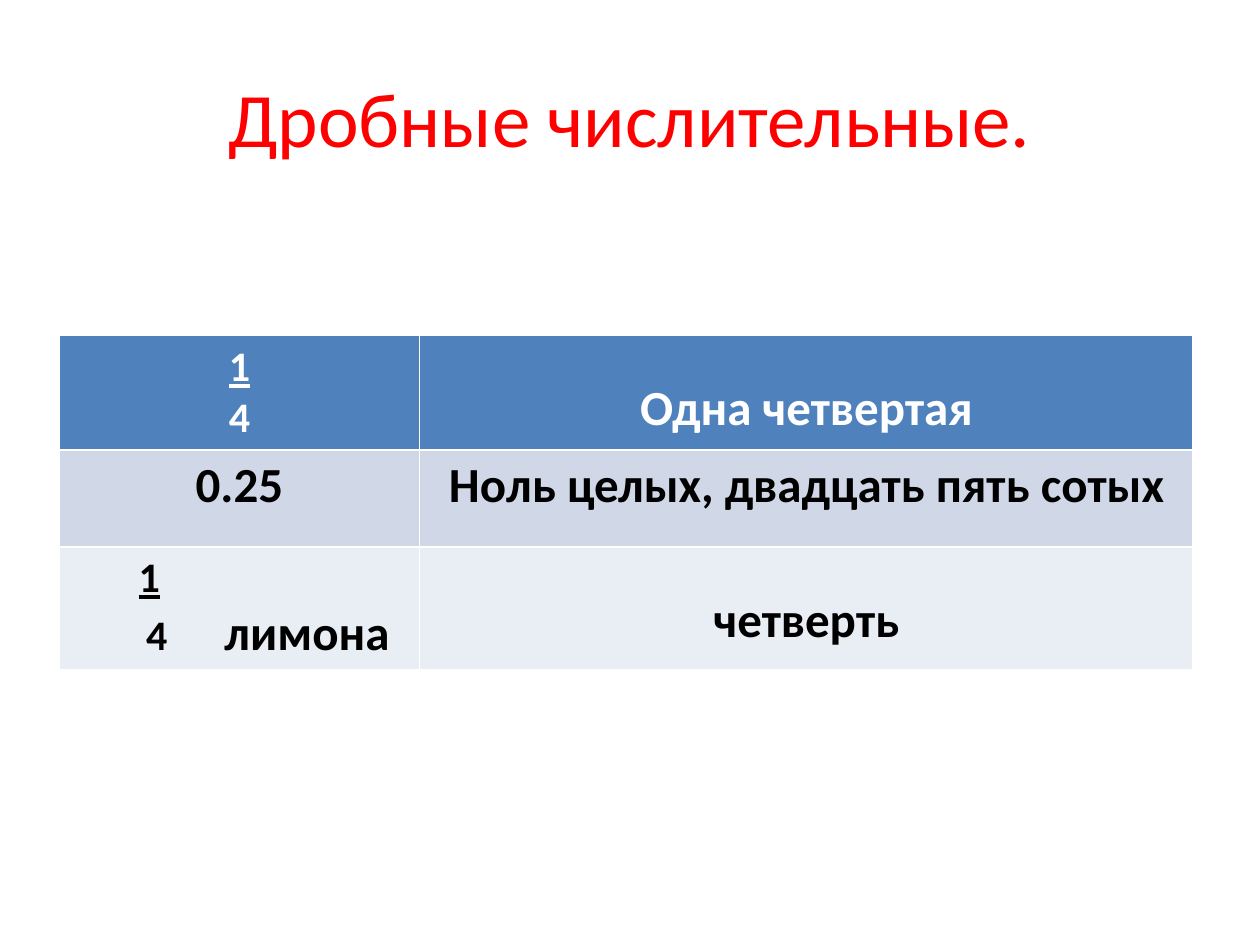
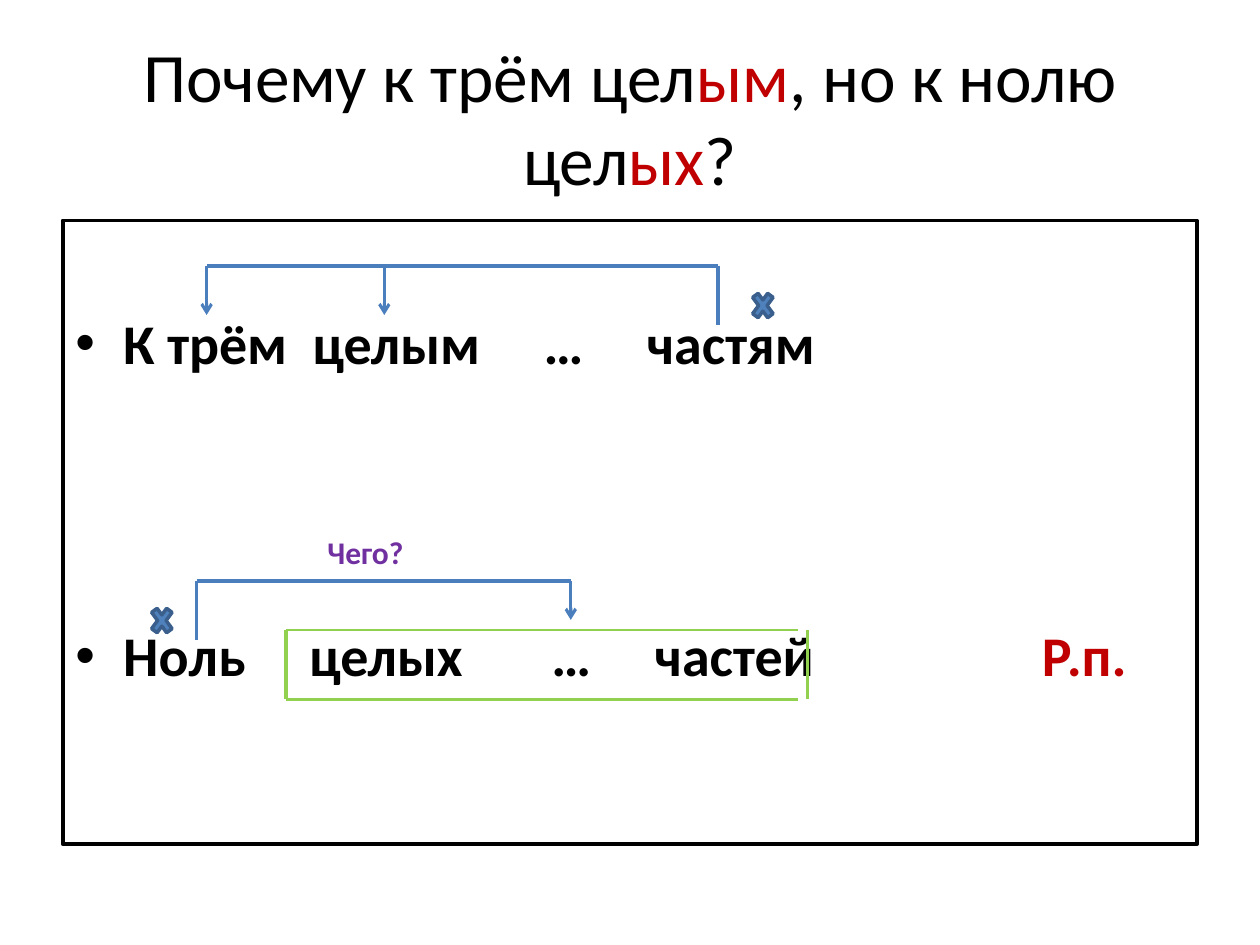
import pptx
import pptx.util
import pptx.dml.color
import pptx.enum.shapes
import pptx.enum.text
import pptx.oxml
import pptx.oxml.ns

Inches = pptx.util.Inches
Pt = pptx.util.Pt
RGBColor = pptx.dml.color.RGBColor
PP_ALIGN = pptx.enum.text.PP_ALIGN
MSO_ANCHOR = pptx.enum.text.MSO_ANCHOR
MSO_SHAPE = pptx.enum.shapes.MSO_SHAPE

FONT = "Calibri"
BLACK = RGBColor(0x00, 0x00, 0x00)
WHITE = RGBColor(0xFF, 0xFF, 0xFF)
RED = RGBColor(0xFF, 0x00, 0x00)
DARK_RED = RGBColor(0xC0, 0x00, 0x00)
PURPLE = RGBColor(0x70, 0x30, 0xA0)
BLUE = RGBColor(0x4F, 0x81, 0xBD)
ARROW_BLUE = RGBColor(0x4B, 0x7E, 0xBC)
CROSS_EDGE = RGBColor(0x3A, 0x5F, 0x8C)
GREEN = RGBColor(0x92, 0xD0, 0x50)
ROW_DARK = RGBColor(0xD0, 0xD8, 0xE8)
ROW_LIGHT = RGBColor(0xE9, 0xED, 0xF4)

SPACE_WIDTH = 0.226


def add_run(p, text, size, color=BLACK, bold=False, underline=False):
    r = p.add_run()
    r.text = text
    r.font.name = FONT
    r.font.size = Pt(size)
    r.font.color.rgb = color
    r.font.bold = bold
    r.font.underline = underline
    return r


def add_gap(p, spaces, size):
    r = add_run(p, " ", size, bold=True)
    extra = (spaces - 1) * SPACE_WIDTH * size
    r.font._element.set("spc", str(round(extra * 100)))


def set_indent(p, left, first=0):
    pPr = p._p.get_or_add_pPr()
    pPr.set("marL", str(Inches(left)))
    pPr.set("indent", str(Inches(first)))
    return pPr


def add_textbox(slide, left, top, width, height):
    sp = slide.shapes.add_textbox(Inches(left), Inches(top), Inches(width), Inches(height))
    sp.text_frame.word_wrap = True
    return sp.text_frame


def add_title(slide, parts, size):
    tf = add_textbox(slide, 0.5, 0.3, 9, 1.25)
    tf.vertical_anchor = MSO_ANCHOR.MIDDLE
    p = tf.paragraphs[0]
    p.alignment = PP_ALIGN.CENTER
    for text, color in parts:
        add_run(p, text, size, color)


def add_bullet(p, words, size, space_before=0):
    pPr = set_indent(p, 0.38, -0.38)
    p.alignment = PP_ALIGN.LEFT
    p.space_before = Pt(space_before)
    ns = pptx.oxml.ns.nsdecls("a")
    pPr.append(pptx.oxml.parse_xml(f'<a:buFont {ns} typeface="Arial"/>'))
    pPr.append(pptx.oxml.parse_xml(f'<a:buChar {ns} char="•"/>'))
    for spaces, text, color in words:
        if spaces:
            add_gap(p, spaces, size)
        add_run(p, text, size, color, bold=True)


def add_line(slide, start, end, color, width, arrow=False):
    ends = [Inches(v) for v in (*start, *end)]
    cxn = slide.shapes.add_connector(pptx.enum.shapes.MSO_CONNECTOR.STRAIGHT, *ends)
    cxn.line.color.rgb = color
    cxn.line.width = Pt(width)
    ns = pptx.oxml.ns.nsdecls("a")
    if arrow:
        cxn.line._get_or_add_ln().append(pptx.oxml.parse_xml(f'<a:tailEnd {ns} type="arrow"/>'))
    cxn._element.spPr.append(pptx.oxml.parse_xml(f"<a:effectLst {ns}/>"))


def add_cross(slide, left, top):
    sp = slide.shapes.add_shape(MSO_SHAPE.MATH_MULTIPLY, Inches(left), Inches(top), Inches(0.23), Inches(0.31))
    sp.shadow.inherit = False
    sp.fill.solid()
    sp.fill.fore_color.rgb = BLUE
    sp.line.color.rgb = CROSS_EDGE
    sp.line.width = Pt(2)


def fill_cell(cell, text, size, color, top=0.05):
    cell.margin_top = Inches(top)
    tf = cell.text_frame
    tf.text = text
    for p in tf.paragraphs:
        p.alignment = PP_ALIGN.CENTER
        for r in p.runs:
            r.font.name = FONT
            r.font.size = Pt(size)
            r.font.bold = True
            r.font.color.rgb = color
    return tf


def add_fraction_table(slide):
    heights = [0.91, 0.77, 0.98]
    frame = slide.shapes.add_table(3, 2, Inches(0.47), Inches(2.66), Inches(9), Inches(sum(heights)))
    table = frame.table
    for column, width in zip(table.columns, [2.86, 6.14]):
        column.width = Inches(width)
    for row, height, color in zip(table.rows, heights, [BLUE, ROW_DARK, ROW_LIGHT]):
        row.height = Inches(height)
        for cell in row.cells:
            cell.fill.solid()
            cell.fill.fore_color.rgb = color

    tf = fill_cell(table.cell(0, 0), "1\n4", 24, WHITE)
    tf.paragraphs[0].runs[0].font.underline = True
    fill_cell(table.cell(0, 1), "Одна четвертая", 28, WHITE, top=0.35)
    fill_cell(table.cell(1, 0), "0.25", 28, BLACK)
    fill_cell(table.cell(1, 1), "Ноль целых, двадцать пять сотых", 28, BLACK)
    fill_cell(table.cell(2, 1), "четверть", 28, BLACK, top=0.35)

    tf = table.cell(2, 0).text_frame
    numerator = tf.paragraphs[0]
    set_indent(numerator, 0.53)
    add_run(numerator, "1", 24, bold=True, underline=True)
    denominator = tf.add_paragraph()
    set_indent(denominator, 0.59)
    add_run(denominator, "4", 24, bold=True)
    add_gap(denominator, 6, 24)
    add_run(denominator, "лимона", 28, bold=True)


def add_phrases(slide):
    sp = slide.shapes.add_shape(MSO_SHAPE.RECTANGLE, Inches(0.5), Inches(1.75), Inches(9), Inches(4.95))
    sp.shadow.inherit = False
    sp.fill.background()
    sp.line.color.rgb = BLACK
    sp.line.width = Pt(2.25)
    tf = sp.text_frame
    tf.word_wrap = True
    tf.vertical_anchor = MSO_ANCHOR.TOP
    tf.margin_top = Inches(0.7)
    add_bullet(tf.paragraphs[0], [
        (0, "К трём", BLACK), (2, "целым", BLACK), (5, "…", BLACK), (5, "частям", BLACK),
    ], 32)
    add_bullet(tf.add_paragraph(), [
        (0, "Ноль", BLACK), (5, "целых", BLACK), (7, "…", BLACK), (5, "частей", BLACK),
        (18, "Р.п.", DARK_RED),
    ], 32, space_before=140)


def add_links(slide, y, source, targets, drop):
    xs = [source, *targets]
    add_line(slide, (min(xs), y), (max(xs), y), ARROW_BLUE, 2)
    add_line(slide, (source, y), (source, y + 0.47), ARROW_BLUE, 2)
    for x in targets:
        add_line(slide, (x, y), (x, y + drop), ARROW_BLUE, 1.75, arrow=True)


def add_phrase_frame(slide):
    left, right, top, bottom = 2.27, 6.41, 5, 5.55
    for y in (top, bottom):
        add_line(slide, (left, y), (right - 0.08, y), GREEN, 1.5)
    for x in (left, right):
        add_line(slide, (x, top), (x, bottom), GREEN, 1.75)


def main():
    prs = pptx.Presentation()
    prs.slide_width = Inches(10)
    prs.slide_height = Inches(7.5)
    blank = prs.slide_layouts[6]

    slide = prs.slides.add_slide(blank)
    add_title(slide, [("Дробные числительные.", RED)], 44)
    add_fraction_table(slide)

    slide = prs.slides.add_slide(blank)
    add_title(slide, [
        ("Почему к трём цел", BLACK), ("ым", DARK_RED), (", но к нолю цел", BLACK),
        ("ых", DARK_RED), ("?", BLACK),
    ], 39.6)
    add_phrases(slide)
    add_links(slide, 2.11, 5.7, [1.64, 3.05], 0.39)
    add_cross(slide, 5.94, 2.27)
    add_cross(slide, 1.17, 4.77)
    add_phrase_frame(slide)
    add_links(slide, 4.61, 1.56, [4.53], 0.31)
    tf = add_textbox(slide, 2.5, 4.18, 2.34, 0.4)
    add_run(tf.paragraphs[0], "Чего?", 18, PURPLE, bold=True)

    prs.save("out.pptx")


if __name__ == "__main__":
    main()
